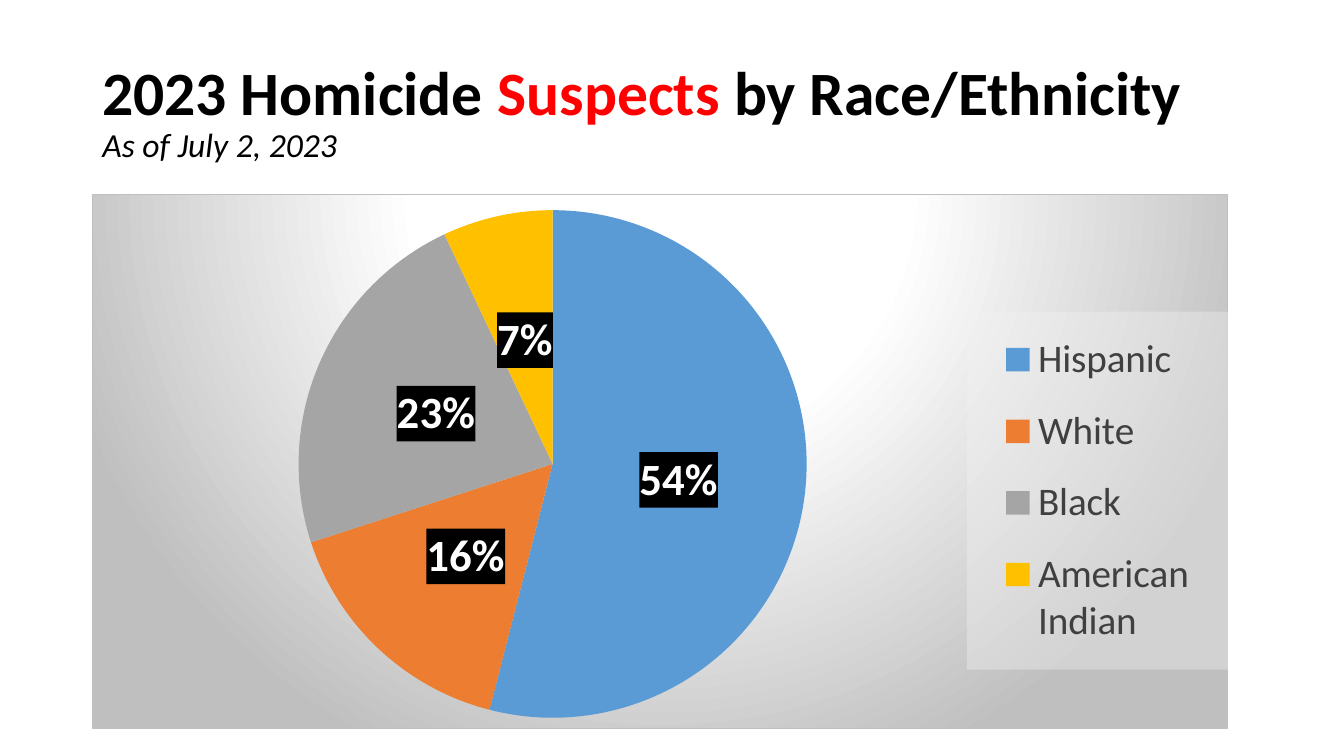
from dataclasses import dataclass
from pptx import Presentation
from pptx.chart.data import CategoryChartData
from pptx.dml.color import RGBColor
from pptx.enum.chart import XL_CHART_TYPE, XL_LABEL_POSITION, XL_LEGEND_POSITION
from pptx.enum.text import MSO_ANCHOR
from pptx.oxml import parse_xml
from pptx.oxml.ns import nsdecls, qn
from pptx.util import Cm, Pt

PIE = XL_CHART_TYPE.PIE
CENTER = XL_LABEL_POSITION.CENTER
RIGHT = XL_LEGEND_POSITION.RIGHT
MIDDLE = MSO_ANCHOR.MIDDLE


@dataclass(frozen=True)
class Theme:
    """Colours, typeface and type sizes."""
    face: str = "Calibri"
    ink: str = "000000"
    accent: str = "FF0000"
    muted: str = "404040"
    light: str = "FFFFFF"
    pale: str = "F2F2F2"
    edge: str = "BFBFBF"
    slices: tuple = ("5B9BD5", "ED7D31", "A5A5A5", "FFC000")
    title: int = 44
    note: int = 24
    label: int = 32
    key: int = 28
    base: int = 10


THEME = Theme()
SHARES = {"Hispanic": 54, "White": 16, "Black": 23, "American Indian": 7}


def style(font, size, color, **extra):
    """Set the format values of a font."""
    for name, value in {"name": THEME.face, "size": Pt(size), **extra}.items():
        setattr(font, name, value)
    font.color.rgb = RGBColor.from_string(color)


def paint(color, alpha):
    """Return shape properties with a see-through fill."""
    return parse_xml(
        f'<c:spPr {nsdecls("c", "a")}><a:solidFill><a:srgbClr val="{color}">'
        f'<a:alpha val="{alpha * 1000}"/></a:srgbClr></a:solidFill></c:spPr>')


def glow():
    """Return shape properties with the radial backdrop and thin border."""
    stops = ((0, THEME.light), (39, THEME.light), (100, THEME.edge))
    marks = "".join(f'<a:gs pos="{pos * 1000}"><a:srgbClr val="{color}"/></a:gs>'
                    for pos, color in stops)
    return parse_xml(
        f'<c:spPr {nsdecls("c", "a")}><a:gradFill><a:gsLst>{marks}</a:gsLst>'
        '<a:path path="circle"><a:fillToRect l="50000" t="-80000" r="50000" b="180000"/>'
        f'</a:path></a:gradFill><a:ln w="{Pt(0.75)}"><a:solidFill>'
        f'<a:srgbClr val="{THEME.edge}"/></a:solidFill></a:ln></c:spPr>')


def place(node, index, box, inner=False):
    """Give a chart part a fixed box in fractions of the chart."""
    for old in node.findall(qn("c:layout")):
        node.remove(old)
    target = '<c:layoutTarget val="inner"/>' if inner else ""
    modes = "".join(f'<c:{axis}Mode val="edge"/>' for axis in "xy")
    sizes = "".join(f'<c:{axis} val="{value}"/>' for axis, value in zip("xywh", box))
    node.insert(index, parse_xml(
        f'<c:layout {nsdecls("c")}><c:manualLayout>{target}{modes}{sizes}'
        '</c:manualLayout></c:layout>'))


def heading(slide, box):
    """Write the title and its date line."""
    frame = slide.shapes.add_textbox(*box).text_frame
    frame.word_wrap = True
    frame.vertical_anchor = MIDDLE
    para = frame.paragraphs[0]
    para.line_spacing = 0.9
    for text, color in (("2023 Homicide ", THEME.ink), ("Suspects", THEME.accent),
                        (" by Race/Ethnicity", THEME.ink)):
        run = para.add_run()
        run.text = text
        style(run.font, THEME.title, color, bold=True)
    para.add_line_break()
    run = para.add_run()
    run.text = "As of July 2, 2023"
    style(run.font, THEME.note, THEME.ink, italic=True)


def pie(slide, box):
    """Draw the pie with its labels and legend."""
    data = CategoryChartData()
    data.categories = list(SHARES)
    data.add_series("Series 1", list(SHARES.values()))
    chart = slide.shapes.add_chart(PIE, *box, data).chart
    chart.has_title = False
    style(chart.font, THEME.base, THEME.ink)
    root = chart.element if hasattr(chart, "element") else chart._chartSpace
    body = root.find(qn("c:chart"))
    body.addnext(glow())
    place(body.find(qn("c:plotArea")), 0, (0.18, 0.03, 0.45, 0.95), True)

    plot = chart.plots[0]
    plot.vary_by_categories = True
    series = plot.series[0]
    for index, color in enumerate(THEME.slices):
        fill = series.points[index].format.fill
        fill.solid()
        fill.fore_color.rgb = RGBColor.from_string(color)

    labels = series.data_labels
    for name, value in {"show_percentage": True, "show_value": False,
                        "show_legend_key": False, "number_format": "0%",
                        "number_format_is_linked": False,
                        "position": CENTER}.items():
        setattr(labels, name, value)
    style(labels.font, THEME.label, THEME.light, bold=True)
    labels._element.find(qn("c:txPr")).addprevious(paint(THEME.ink, 75))

    chart.has_legend = True
    legend = chart.legend
    legend.position = RIGHT
    legend.include_in_layout = False
    style(legend.font, THEME.key, THEME.muted)
    node = legend._element
    place(node, 1, (0.77, 0.22, 0.23, 0.67))
    node.find(qn("c:txPr")).addprevious(paint(THEME.pale, 39))


def main():
    """Build and save the slide."""
    deck = Presentation()
    deck.slide_width, deck.slide_height = Cm(33.87), Cm(19.05)
    slide = deck.slides.add_slide(deck.slide_layouts[6])
    left = Cm(2.33)
    heading(slide, (left, Cm(1.02), Cm(29.21), Cm(3.68)))
    pie(slide, (left, Cm(4.88), Cm(28.63), Cm(13.49)))
    deck.save("out.pptx")


if __name__ == "__main__":
    main()
